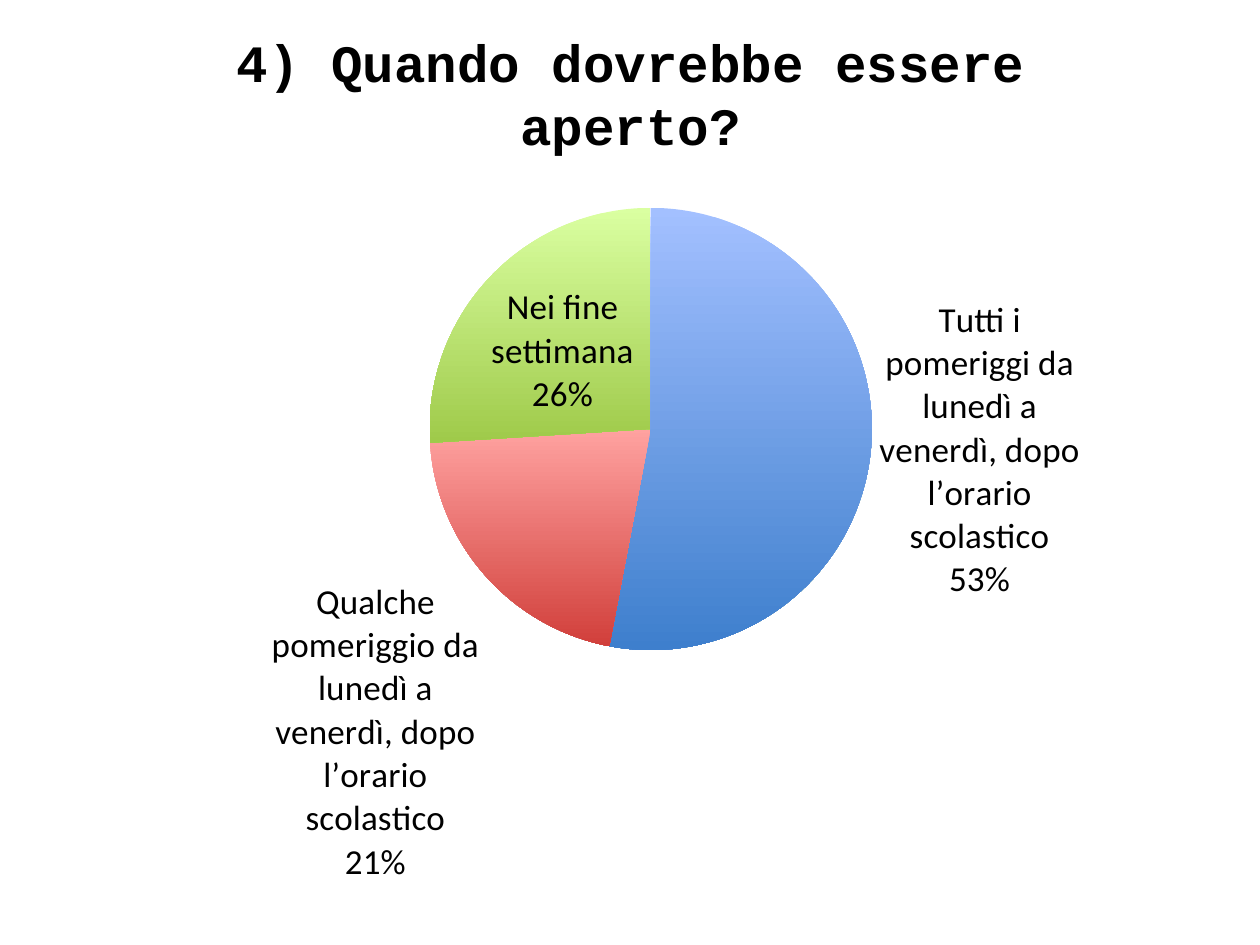
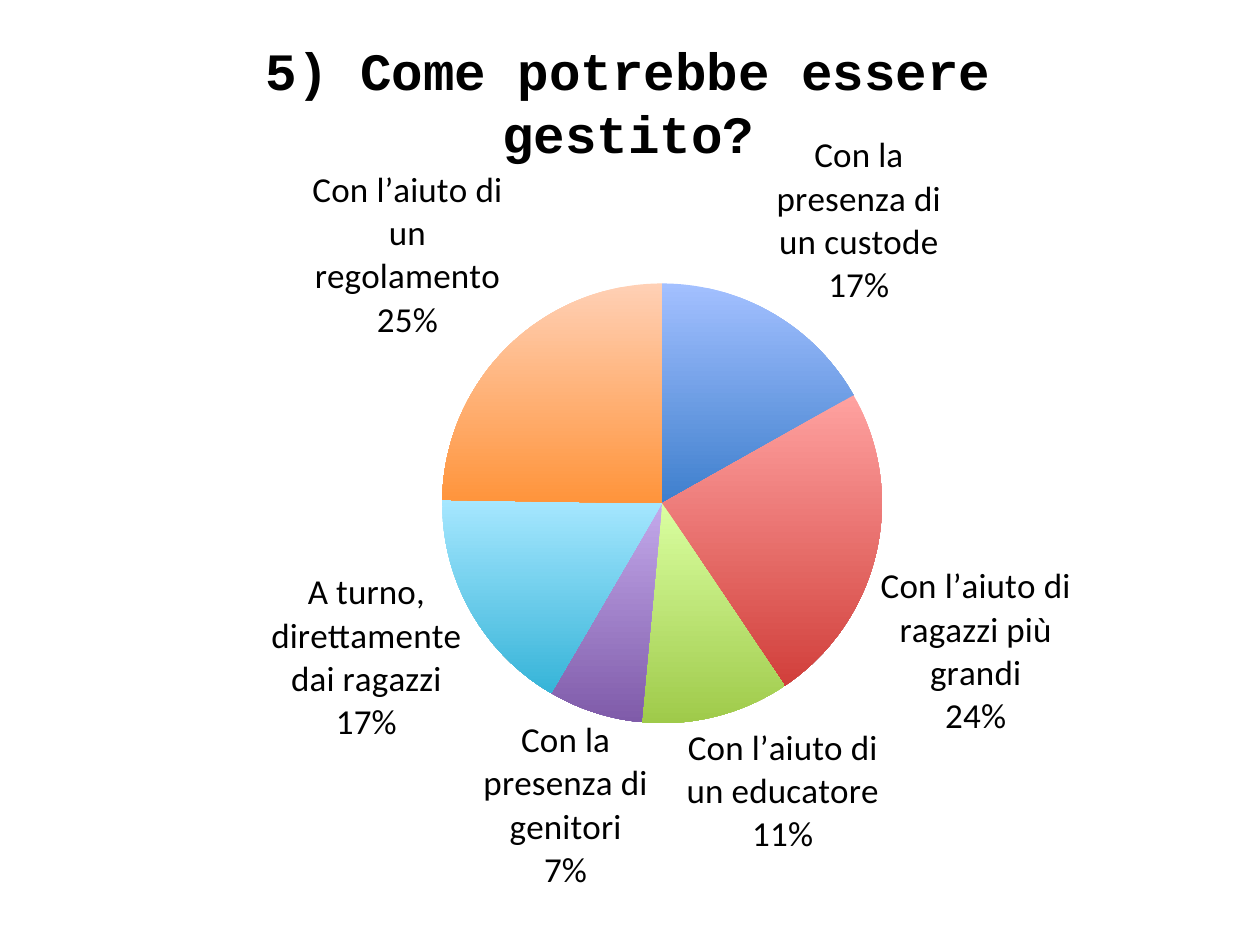
from dataclasses import dataclass
from lxml.etree import SubElement
from pptx import Presentation
from pptx.chart.data import CategoryChartData
from pptx.dml.color import RGBColor
from pptx.enum.chart import XL_CHART_TYPE, XL_LABEL_POSITION
from pptx.enum.text import MSO_ANCHOR, MSO_AUTO_SIZE, PP_ALIGN
from pptx.oxml.ns import qn
from pptx.util import Inches, Pt

OUTSIDE = XL_LABEL_POSITION.OUTSIDE_END
CENTER = XL_LABEL_POSITION.CENTER

QUESTIONS = [
    {
        "title": "4) Quando dovrebbe essere aperto?",
        "title_box": (1.16, 0.19, 7.69, 1.1),
        "chart_box": (0.43, 0.88, 9.16, 6.4),
        "pie_box": (3.41, 1.65, 3.51),
        "answers": [
            ("Tutti i pomeriggi da lunedì a venerdì, dopo l’orario scolastico", 53),
            ("Qualche pomeriggio da lunedì a venerdì, dopo l’orario scolastico", 21),
            ("Nei fine settimana", 26),
        ],
        "moved_labels": {0: (OUTSIDE, 0.01, -1.21), 2: (CENTER, -0.06, -0.02)},
    },
    {
        "title": "5) Come potrebbe essere gestito?",
        "title_box": (1.39, 0.25, 7.19, 1.1),
        "chart_box": (0.81, 0.88, 8.3, 6.4),
        "pie_box": (3.51, 2.25, 3.49),
        "answers": [
            ("Con la presenza di un custode", 17),
            ("Con l’aiuto di ragazzi più grandi", 24),
            ("Con l’aiuto di un educatore", 11),
            ("Con la presenza di genitori", 7),
            ("A turno, direttamente dai ragazzi", 17),
            ("Con l’aiuto di un regolamento", 25),
        ],
        "moved_labels": {
            1: (OUTSIDE, -0.02, 0.07),
            2: (OUTSIDE, -0.25, 0.02),
            3: (OUTSIDE, 0.44, -0.01),
            4: (OUTSIDE, -0.02, -0.35),
        },
    },
]


@dataclass(frozen=True)
class Theme:
    text: RGBColor = RGBColor.from_string("000000")
    title_font: str = "Courier New"
    title_size: int = 30
    label_font: str = "Calibri"
    label_size: int = 20
    slices: tuple = (
        ("A3C0FF", "3E7FCD"),
        ("FFA2A0", "D13F3B"),
        ("DAFFA1", "9FCA4A"),
        ("C3A9EB", "7F5BA9"),
        ("A6E7FF", "36B4D8"),
        ("FFD0B5", "FF943B"),
    )


THEME = Theme()


def apply(target, values):
    for name, value in values.items():
        setattr(target, name, value)


def style_font(font, name, size, bold=False):
    apply(font, {"name": name, "size": Pt(size), "bold": bold})
    font.color.rgb = THEME.text


def add_title(page, text, box):
    title = page.shapes.title
    apply(title, dict(zip(("left", "top", "width", "height"), map(Inches, box))))
    frame = title.text_frame
    frame.text = text
    apply(frame, {"word_wrap": True, "auto_size": MSO_AUTO_SIZE.NONE,
                  "vertical_anchor": MSO_ANCHOR.TOP})
    para = frame.paragraphs[0]
    para.alignment = PP_ALIGN.CENTER
    style_font(para.runs[0].font, THEME.title_font, THEME.title_size, True)


def set_layout(parent, index, settings):
    for old in parent.findall(qn("c:layout")):
        parent.remove(old)
    layout = SubElement(parent, qn("c:layout"))
    parent.insert(index, layout)
    manual = SubElement(layout, qn("c:manualLayout"))
    for name, value in settings.items():
        SubElement(manual, qn(f"c:{name}")).set("val", str(value))


def place_pie(chart, chart_box, pie_box):
    left, top, width, height = chart_box
    pie_left, pie_top, diameter = pie_box
    set_layout(chart._chartSpace.chart.plotArea, 0, {
        "layoutTarget": "inner", "xMode": "edge", "yMode": "edge",
        "x": (pie_left - left) / width, "y": (pie_top - top) / height,
        "w": diameter / width, "h": diameter / height,
    })


def break_before_percent(labels_element):
    bubble = labels_element.find(qn("c:showBubbleSize"))
    separator = SubElement(labels_element, qn("c:separator"))
    separator.text = "\n"
    bubble.addnext(separator)


def label_slices(series, moved_labels, chart_box):
    labels = series.data_labels
    apply(labels, {"show_value": False, "show_category_name": True,
                   "show_percentage": True, "position": OUTSIDE})
    style_font(labels.font, THEME.label_font, THEME.label_size)
    break_before_percent(labels._element)
    left, top, width, height = chart_box
    for index, (position, shift_x, shift_y) in moved_labels.items():
        label = series.points[index].data_label
        style_font(label.font, THEME.label_font, THEME.label_size)
        label.position = position
        element = label._get_or_add_dLbl()
        for name, value in {"showVal": "0", "showCatName": "1", "showPercent": "1"}.items():
            element.find(qn(f"c:{name}")).set("val", value)
        break_before_percent(element)
        set_layout(element, 1, {"x": shift_x / width, "y": shift_y / height})


def color_slices(series, count):
    for index, colors in enumerate(THEME.slices[:count]):
        slice_format = series.points[index].format
        fill = slice_format.fill
        fill.gradient()
        fill.gradient_angle = 270
        for stop, color in zip(fill.gradient_stops, colors):
            stop.color.rgb = RGBColor.from_string(color)
        slice_format.line.fill.background()


def add_pie(page, question):
    answers = question["answers"]
    data = CategoryChartData()
    data.categories = [answer for answer, share in answers]
    data.add_series("Series 1", [share for answer, share in answers])
    chart = page.shapes.add_chart(
        XL_CHART_TYPE.PIE, *map(Inches, question["chart_box"]), data).chart
    apply(chart, {"has_title": False, "has_legend": False})
    style_font(chart.font, THEME.label_font, THEME.label_size)
    plot = chart.plots[0]
    plot.vary_by_categories = True
    series = plot.series[0]
    color_slices(series, len(answers))
    label_slices(series, question["moved_labels"], question["chart_box"])
    place_pie(chart, question["chart_box"], question["pie_box"])


def main():
    deck = Presentation()
    apply(deck, {"slide_width": Inches(10), "slide_height": Inches(7.5)})
    for question in QUESTIONS:
        page = deck.slides.add_slide(deck.slide_layouts[5])
        add_title(page, question["title"], question["title_box"])
        add_pie(page, question)
    deck.save("out.pptx")


if __name__ == "__main__":
    main()
